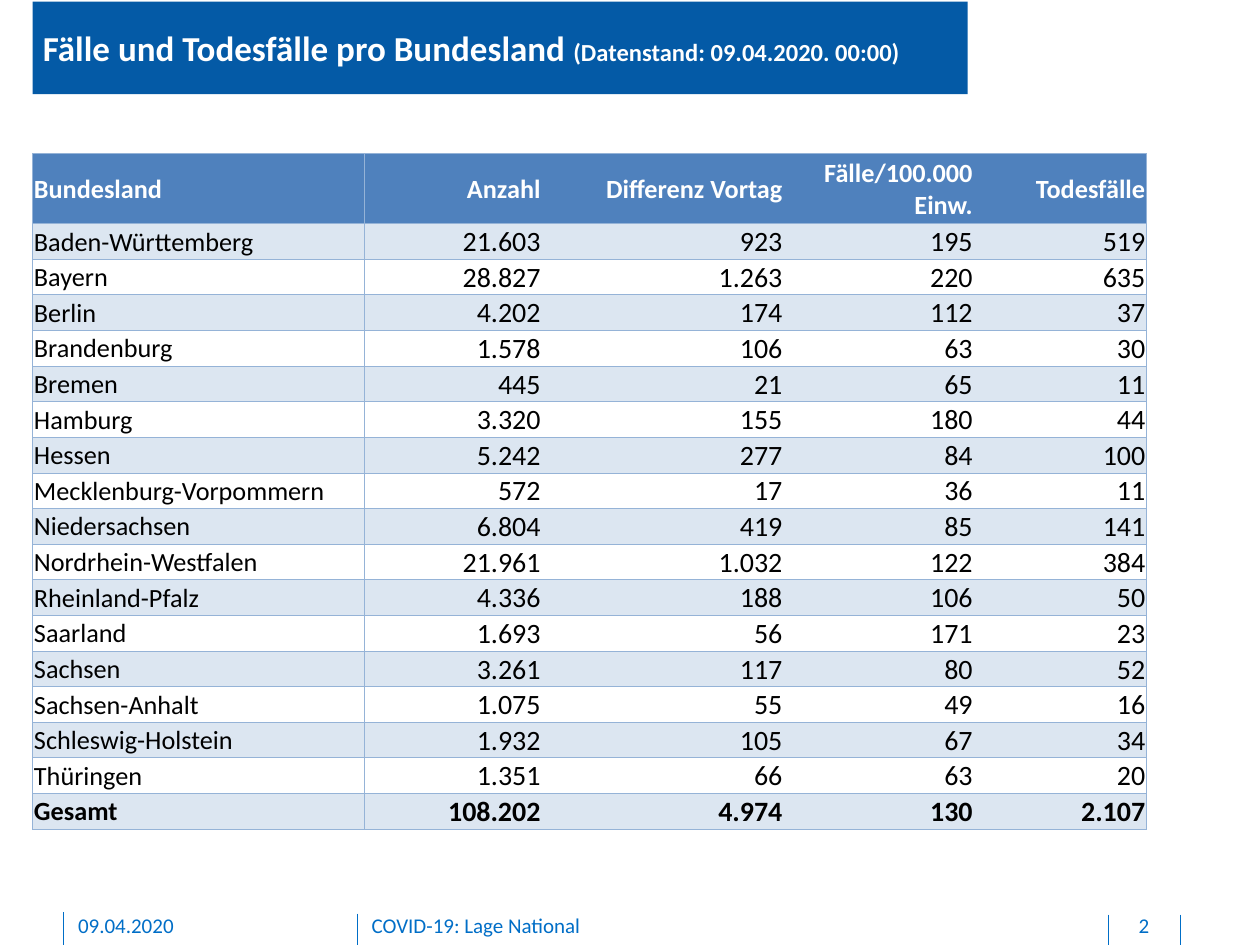
from pptx import Presentation
from pptx.dml.color import RGBColor
from pptx.enum.shapes import MSO_CONNECTOR
from pptx.enum.text import MSO_ANCHOR, MSO_AUTO_SIZE, PP_ALIGN
from pptx.oxml.ns import qn
from pptx.util import Inches, Pt
from lxml.etree import SubElement

HEADER = ["Bundesland", "Anzahl", "Differenz Vortag", "Fälle/100.000 Einw.", "Todesfälle"]
STATES = [
    ["Baden-Württemberg", "21.603", "923", "195", "519"],
    ["Bayern", "28.827", "1.263", "220", "635"],
    ["Berlin", "4.202", "174", "112", "37"],
    ["Brandenburg", "1.578", "106", "63", "30"],
    ["Bremen", "445", "21", "65", "11"],
    ["Hamburg", "3.320", "155", "180", "44"],
    ["Hessen", "5.242", "277", "84", "100"],
    ["Mecklenburg-Vorpommern", "572", "17", "36", "11"],
    ["Niedersachsen", "6.804", "419", "85", "141"],
    ["Nordrhein-Westfalen", "21.961", "1.032", "122", "384"],
    ["Rheinland-Pfalz", "4.336", "188", "106", "50"],
    ["Saarland", "1.693", "56", "171", "23"],
    ["Sachsen", "3.261", "117", "80", "52"],
    ["Sachsen-Anhalt", "1.075", "55", "49", "16"],
    ["Schleswig-Holstein", "1.932", "105", "67", "34"],
    ["Thüringen", "1.351", "66", "63", "20"],
]
TOTAL = ["Gesamt", "108.202", "4.974", "130", "2.107"]


def rgb(value):
    return RGBColor.from_string(value)


def add_text(p, text, size=12, color="000000", bold=False, align=PP_ALIGN.LEFT):
    p.alignment = align
    r = p.add_run()
    r.text = text
    r.font.name = "Calibri"
    r.font.size = Pt(size)
    r.font.bold = bold
    r.font.color.rgb = rgb(color)


class Deck:
    """Style and current slide; lengths are percentages of the slide's size."""
    accent, bar, head = "006EC7", "045AA6", "4F81BD"
    band, border, white = "DCE6F1", "95B3D7", "FFFFFF"

    def __init__(self, prs):
        self.prs = prs
        self.s = prs.slides.add_slide(prs.slide_layouts[5])

    def x(self, share):
        return round(self.prs.slide_width * share / 100)

    def y(self, share):
        return round(self.prs.slide_height * share / 100)

    def box(self, left, top, width, height):
        return self.x(left), self.y(top), self.x(width), self.y(height)

    def title(self, text, note, *place):
        sp = self.s.shapes.title
        sp.left, sp.top, sp.width, sp.height = self.box(*place)
        sp.fill.solid()
        sp.fill.fore_color.rgb = rgb(self.bar)
        tf = sp.text_frame
        tf.margin_left = Inches(0.08)
        tf.margin_right = tf.margin_top = tf.margin_bottom = 0
        tf.vertical_anchor = MSO_ANCHOR.MIDDLE
        tf.auto_size = MSO_AUTO_SIZE.SHAPE_TO_FIT_TEXT
        for part, size in ((text, 20), (note, 14)):
            add_text(tf.paragraphs[0], part, size=size, color=self.white, bold=True)

    def footer(self, text, left, width, align=PP_ALIGN.LEFT):
        tf = self.s.shapes.add_textbox(*self.box(left, 96.53, width, 2.8)).text_frame
        tf.word_wrap = True
        tf.margin_left = tf.margin_right = tf.margin_top = 0
        tf.margin_bottom = Inches(0.05)
        add_text(tf.paragraphs[0], text, color=self.accent, align=align)

    def divider(self, left, top):
        line = self.s.shapes.add_connector(
            MSO_CONNECTOR.STRAIGHT, self.x(left), self.y(top), self.x(left), self.y(100))
        line.line.color.rgb = rgb(self.accent)
        line.line.width = Pt(0.5)
        SubElement(line._element.spPr, qn("a:effectLst"))

    def borders(self, cell, visible):
        tc_pr = cell._tc.get_or_add_tcPr()
        for side in "LRTB":
            ln = SubElement(tc_pr, qn(f"a:ln{side}"), w=str(Pt(0.5)))
            if side in visible:
                fill = SubElement(ln, qn("a:solidFill"))
                SubElement(fill, qn("a:srgbClr"), val=self.border)
            else:
                SubElement(ln, qn("a:noFill"))

    def cell(self, cell, text, visible, fill, **font):
        cell.margin_left = cell.margin_right = cell.margin_top = Inches(0.01)
        cell.margin_bottom = 0
        cell.vertical_anchor = MSO_ANCHOR.MIDDLE
        self.borders(cell, visible)
        if fill:
            cell.fill.solid()
            cell.fill.fore_color.rgb = rgb(fill)
        else:
            cell.fill.background()
        add_text(cell.text_frame.paragraphs[0], text, **font)

    def table(self, rows, left, top, widths, head_height, row_height):
        heights = [head_height] + [row_height] * (len(rows) - 1)
        place = self.box(left, top, sum(widths), sum(heights))
        table = self.s.shapes.add_table(len(rows), len(widths), *place).table
        table.first_row = table.horz_banding = False
        for column, width in zip(table.columns, widths):
            column.width = self.x(width)
        last_row, last_col = len(rows) - 1, len(widths) - 1
        # Vertical rules frame the table and set off the name column
        edges = {0: "LRTB", 1: "LTB", last_col: "RTB"}
        for i, values in enumerate(rows):
            table.rows[i].height = self.y(heights[i])
            fill = self.head if i == 0 else self.band if i % 2 else None
            for j, text in enumerate(values):
                self.cell(table.cell(i, j), text, edges.get(j, "TB"), fill,
                          size=15 if i == 0 or j == 0 else 16,
                          color=self.white if i == 0 else "000000",
                          bold=i in (0, last_row),
                          align=PP_ALIGN.RIGHT if j else PP_ALIGN.LEFT)


def main():
    prs = Presentation()
    prs.slide_width, prs.slide_height = Inches(10), Inches(7.5)
    deck = Deck(prs)

    # Footer
    for left, top in ((28.4, 96.67), (5, 96.53), (93.7, 96.8), (88, 96.8)):
        deck.divider(left, top)
    deck.footer("09.04.2020", 6.2, 20.3)
    deck.footer("COVID-19: Lage National", 29.5, 56.7)
    deck.footer("2", 88.1, 5.4, align=PP_ALIGN.CENTER)

    # Title bar
    deck.title("Fälle und Todesfälle pro Bundesland ",
               "(Datenstand: 09.04.2020. 00:00)", 2.6, 2.8, 74.2, 4.53)

    # Cases by state
    deck.table([HEADER, *STATES, TOTAL], 2.6, 16.27,
               [26.3, 14.1, 19.2, 15.1, 13.7], 7.4, 3.77)

    prs.save("out.pptx")


if __name__ == "__main__":
    main()
